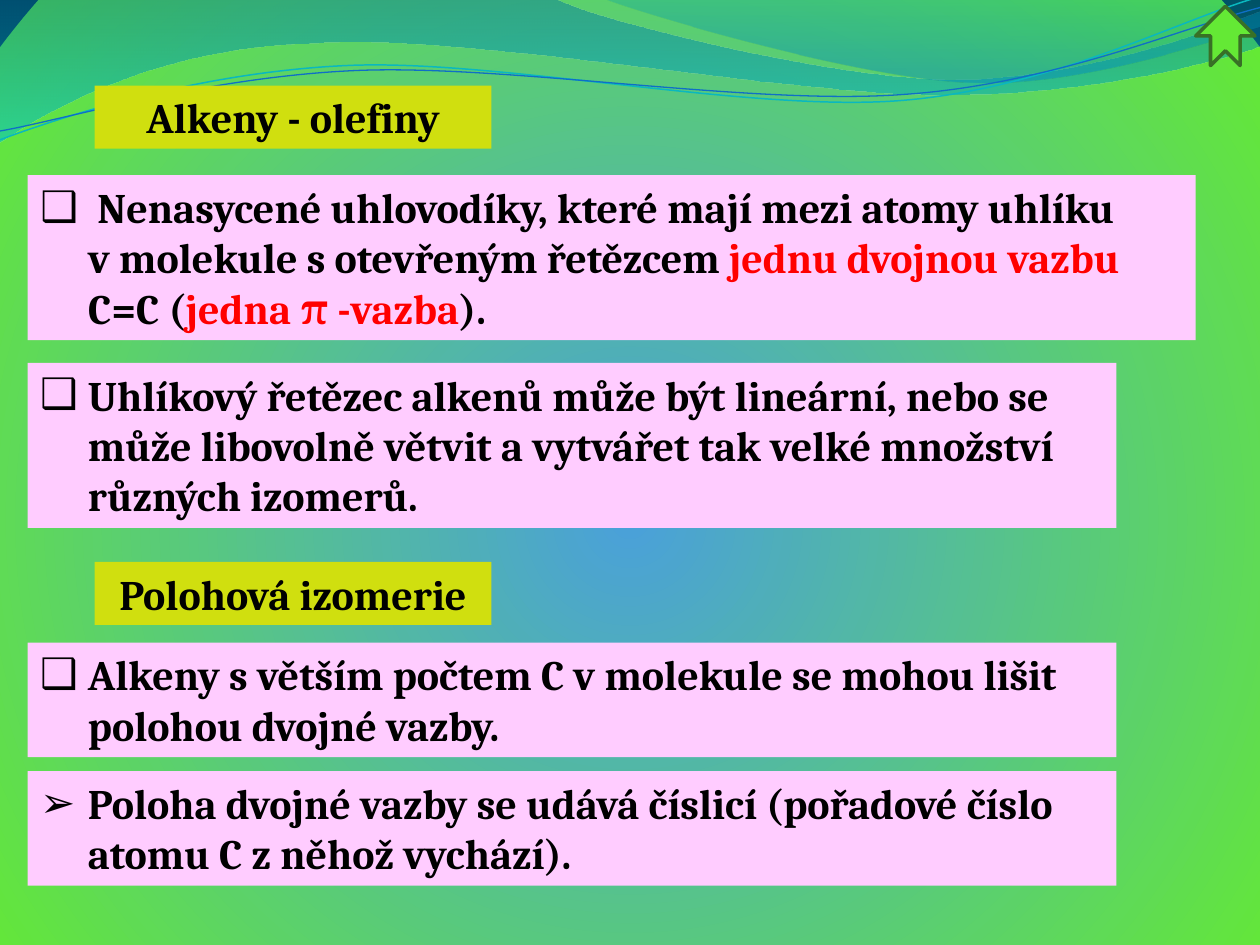
from dataclasses import dataclass

from lxml import etree
from pptx import Presentation
from pptx.dml.color import RGBColor
from pptx.enum.shapes import MSO_SHAPE
from pptx.enum.text import MSO_ANCHOR, MSO_AUTO_SIZE, PP_ALIGN
from pptx.oxml.ns import qn
from pptx.util import Inches, Pt

NBSP = chr(160)


@dataclass(frozen=True)
class Theme:
    font: str = "Cambria"
    bullet_font: str = "Arial"
    size: int = 24
    text: str = "000000"
    accent: str = "FF0000"
    heading: str = "D0DF0F"
    panel: str = "FFCCFF"
    arrow: str = "64E935"
    arrow_edge: str = "387026"
    cyan_line: str = "0AB8BF"
    blue_line: str = "0F6FC6"
    # Gradient stops: position, colour, opacity in percent
    background: tuple = ((0, "4AA0DA", 100), (100, "64E935", 100), (100, "00324A", 100))
    broad_wave: tuple = ((0, "0074A1", 45), (100, "00C6CF", 55))
    narrow_wave: tuple = ((0, "00A1A9", 30), (80, "008BBF", 45))


def fill_gradient(owner, fill, stops, focus=None):
    """Fill top to bottom, or in circles around focus (left, top, right, bottom in percent)."""
    fill.gradient()
    gradient = owner.find(".//" + qn("a:gradFill"))
    for child in list(gradient):
        gradient.remove(child)
    stop_list = etree.SubElement(gradient, qn("a:gsLst"))
    for position, color, opacity in stops:
        stop = etree.SubElement(stop_list, qn("a:gs"), pos=str(position * 1000))
        rgb = etree.SubElement(stop, qn("a:srgbClr"), val=color)
        if opacity < 100:
            etree.SubElement(rgb, qn("a:alpha"), val=str(opacity * 1000))
    if focus:
        circle = etree.SubElement(gradient, qn("a:path"), {"path": "circle"})
        sides = {side: str(value * 1000) for side, value in zip("ltrb", focus)}
        etree.SubElement(circle, qn("a:fillToRect"), sides)
    else:
        etree.SubElement(gradient, qn("a:lin"), ang="5400000", scaled="1")


class SlideBuilder:
    def __init__(self, slide, theme):
        self.slide = slide
        self.theme = theme

    def background(self):
        fill = self.slide.background.fill
        fill_gradient(self.slide.element, fill, self.theme.background, (10, 110, 10, 100))

    def curve(self, bounds, start, segments, close):
        """Draw a curved outline: a segment of 2 numbers is a line, one of 6 a Bezier curve."""
        left, top, width, height = bounds
        builder = self.slide.shapes.build_freeform(Inches(left), Inches(top))
        builder.add_line_segments([(Inches(left + width), Inches(top + height))], close=False)
        shape = builder.convert_to_shape()
        shape.shadow.inherit = False
        outline = shape.element.find(".//" + qn("a:pathLst"))[0]
        for child in list(outline):
            outline.remove(child)
        commands = {2: "a:lnTo", 6: "a:cubicBezTo"}
        steps = [("a:moveTo", start)] + [(commands[len(s)], s) for s in segments]
        for command, numbers in steps:
            step = etree.SubElement(outline, qn(command))
            for x, y in zip(numbers[::2], numbers[1::2]):
                etree.SubElement(step, qn("a:pt"), x=str(Inches(x - left)),
                                 y=str(Inches(y - top)))
        if close:
            etree.SubElement(outline, qn("a:close"))
        return shape

    def wave(self, stops, bounds, start, *segments):
        shape = self.curve(bounds, start, segments, True)
        fill_gradient(shape.element, shape.fill, stops)
        shape.line.fill.background()

    def thread(self, color, width, bounds, start, *segments):
        shape = self.curve(bounds, start, segments, False)
        shape.fill.background()
        shape.line.color.rgb = RGBColor.from_string(color)
        shape.line.width = Pt(width)

    def box(self, bounds, color, placeholder=None):
        """Place a filled box, in front of everything so far, and return its text frame."""
        if placeholder is None:
            shape = self.slide.shapes.add_shape(MSO_SHAPE.RECTANGLE, *map(Inches, bounds))
            shape.shadow.inherit = False
        else:
            shape = placeholder
            shape.left, shape.top, shape.width, shape.height = map(Inches, bounds)
            self.slide.shapes.element.append(shape.element)
        shape.fill.solid()
        shape.fill.fore_color.rgb = RGBColor.from_string(color)
        shape.line.fill.background()
        frame = shape.text_frame
        frame.word_wrap = True
        frame.auto_size = MSO_AUTO_SIZE.NONE
        frame.vertical_anchor = MSO_ANCHOR.TOP
        return frame

    def style(self, run, color):
        run.font.name = self.theme.font
        run.font.size = Pt(self.theme.size)
        run.font.bold = True
        run.font.color.rgb = RGBColor.from_string(color)

    def heading(self, top, text, placeholder=None):
        frame = self.box((0.75, top, 3.15, 0.5), self.theme.heading, placeholder)
        frame.text = text
        frame.paragraphs[0].alignment = PP_ALIGN.CENTER
        self.style(frame.paragraphs[0].runs[0], self.theme.text)

    def point(self, top, height, *parts, bullet="❑", width=8.64, placeholder=None):
        """Add a bulleted panel whose parts alternate between text and accent colour."""
        frame = self.box((0.22, top, width, height), self.theme.panel, placeholder)
        paragraph = frame.paragraphs[0]
        paragraph.alignment = PP_ALIGN.LEFT
        paragraph.space_before = Pt(0)
        for index, part in enumerate(parts):
            color = self.theme.accent if index % 2 else self.theme.text
            for number, line in enumerate(part.split("\n")):
                if number:
                    paragraph.add_line_break()
                run = paragraph.add_run()
                run.text = line
                self.style(run, color)
        properties = paragraph._p.get_or_add_pPr()
        properties.set("marL", str(Inches(0.38)))
        properties.set("indent", str(-Inches(0.38)))
        bullet_color = etree.SubElement(properties, qn("a:buClr"))
        etree.SubElement(bullet_color, qn("a:srgbClr"), val=self.theme.text)
        etree.SubElement(properties, qn("a:buFont"), typeface=self.theme.bullet_font)
        etree.SubElement(properties, qn("a:buChar"), char=bullet)

    def up_arrow(self, left, top, size):
        arrow = self.slide.shapes.add_shape(
            MSO_SHAPE.NOTCHED_RIGHT_ARROW, *map(Inches, (left, top, size, size)))
        arrow.rotation = 270
        arrow.shadow.inherit = False
        arrow.fill.solid()
        arrow.fill.fore_color.rgb = RGBColor.from_string(self.theme.arrow)
        arrow.line.color.rgb = RGBColor.from_string(self.theme.arrow_edge)
        arrow.line.width = Pt(2)


def main():
    presentation = Presentation()
    presentation.slide_width, presentation.slide_height = Inches(10), Inches(7.5)
    slide = presentation.slides.add_slide(presentation.slide_layouts[1])
    title, body = slide.placeholders
    theme = Theme()
    page = SlideBuilder(slide, theme)

    page.background()
    page.wave(theme.broad_wave, (-0.01, -0.01, 10.02, 1.14), (0, 0), (4.4, -0.01),
              (4.76, 0.17, 6.64, 0.63, 7.58, 0.63), (8.53, 0.63, 9.58, 0.26, 10, 0.09),
              (10.01, 0.36), (9.83, 0.44, 8.7, 0.76, 7.46, 0.75),
              (6.22, 0.75, 3.82, 0.28, 2.57, 0.34), (1.29, 0.36, 0.46, 0.83, -0.01, 1.13),
              (0, 0))
    page.wave(theme.narrow_wave, (4.79, -0.01, 5.21, 0.7), (4.79, -0.01),
              (5.09, 0.11, 6.82, 0.62, 7.69, 0.65), (8.56, 0.69, 9.61, 0.32, 10, 0.21),
              (10, 0), (4.79, -0.01))
    page.thread(theme.cyan_line, 0.85, (0, -0.02, 9.98, 1.13), (0, 1.11),
                (0.48, 0.93, 1.58, 0.57, 2.77, 0.52), (3.95, 0.47, 5.93, 0.89, 7.13, 0.8),
                (8.33, 0.71, 9.38, 0.15, 9.98, -0.02))
    page.thread(theme.blue_line, 0.75, (0, 0.06, 10, 0.98), (0, 1.04),
                (0.47, 0.96, 1.64, 0.61, 2.83, 0.56), (4.03, 0.51, 5.97, 0.84, 7.17, 0.75),
                (8.36, 0.67, 9.41, 0.21, 10, 0.06))

    page.point(1.39, 1.31,
               f"{NBSP}Nenasycené{NBSP}uhlovodíky, které mají mezi atomy{NBSP}uhlíku{NBSP}\n"
               "v molekule s otevřeným řetězcem ", "jednu dvojnou vazbu ",
               "C=C (", "jedna π -vazba", ").", width=9.27, placeholder=body)
    page.heading(0.68, "Alkeny - olefiny", placeholder=title)
    page.point(2.88, 1.31, "Uhlíkový řetězec alkenů může být lineární, nebo se může libovolně "
                           f"větvit a vytvářet tak velké množství různých{NBSP}izomerů.")
    page.heading(4.46, "Polohová izomerie")
    page.point(5.1, 0.91, "Alkeny s větším počtem C v molekule se mohou lišit "
                          "polohou dvojné vazby.")
    page.point(6.12, 0.91, "Poloha dvojné vazby se udává číslicí (pořadové číslo "
                           "atomu C z něhož vychází).", bullet="➢")
    page.up_arrow(9.49, 0.05, 0.47)
    presentation.save("out.pptx")


if __name__ == "__main__":
    main()
